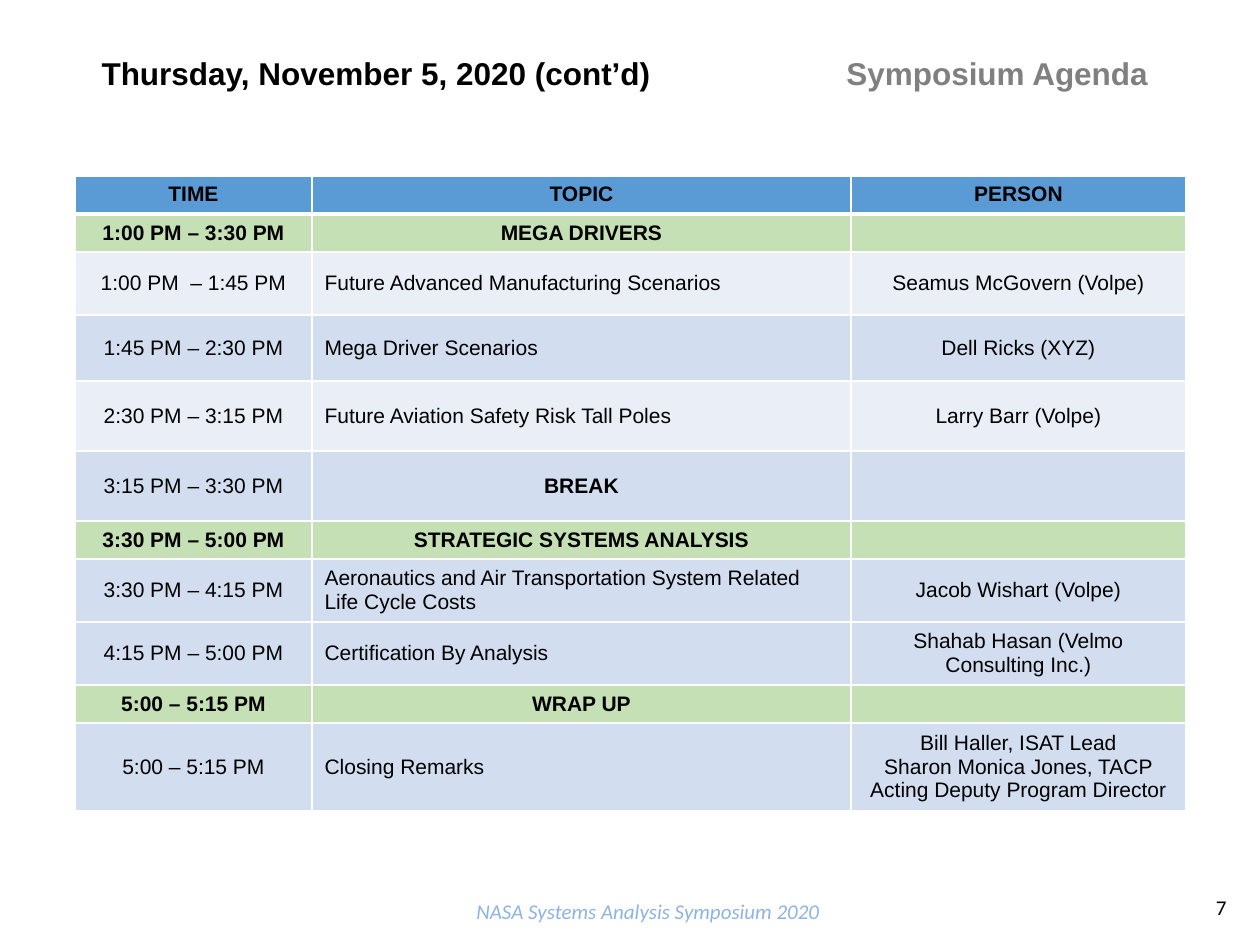
import lxml.etree
import pptx
import pptx.dml.color
import pptx.enum.text
import pptx.oxml.ns
import pptx.util

RGBColor = pptx.dml.color.RGBColor
PP_ALIGN = pptx.enum.text.PP_ALIGN
ANCHOR = pptx.enum.text.MSO_ANCHOR
qn = pptx.oxml.ns.qn

BLACK = RGBColor(0x00, 0x00, 0x00)
GRAY = RGBColor(0x80, 0x80, 0x80)
FOOTER_BLUE = RGBColor(0x8E, 0xB4, 0xE3)
HEADER = RGBColor(0x5B, 0x9B, 0xD5)
SESSION = RGBColor(0xC5, 0xE0, 0xB4)
LIGHT = RGBColor(0xEA, 0xEF, 0xF7)
MEDIUM = RGBColor(0xD2, 0xDE, 0xEF)

PX = 914400 / 126


def px(n):
    return pptx.util.Emu(round(n * PX))


def format_text(tf, size, font, color, align, bold=False, italic=False):
    for p in tf.paragraphs:
        p.alignment = align
        for r in p.runs:
            r.font.size = pptx.util.Pt(size)
            r.font.name = font
            r.font.color.rgb = color
            r.font.bold = bold
            r.font.italic = italic


prs = pptx.Presentation()
prs.slide_width, prs.slide_height = px(1260), px(945)
s = prs.slides.add_slide(prs.slide_layouts[5])

title = s.shapes.title
title.left, title.top, title.width, title.height = px(89), px(48), px(580), px(50)
tf = title.text_frame
tf.text = "Thursday, November 5, 2020 (cont’d)"
tf.word_wrap = False
tf.auto_size = pptx.enum.text.MSO_AUTO_SIZE.NONE
tf.vertical_anchor = ANCHOR.TOP
format_text(tf, 18, "Arial", BLACK, PP_ALIGN.LEFT, bold=True)

# text, box, size, font, colour, alignment, anchor, bold, italic
labels = [
    ("Symposium Agenda", (834, 48, 339, 50), 18, "Arial", GRAY,
     PP_ALIGN.LEFT, ANCHOR.TOP, True, False),
    ("NASA Systems Analysis Symposium 2020", (249, 886, 798, 50), 12, "Calibri",
     FOOTER_BLUE, PP_ALIGN.CENTER, ANCHOR.MIDDLE, False, True),
    ("7", (945, 882, 294, 50), 12, "Calibri", BLACK,
     PP_ALIGN.RIGHT, ANCHOR.MIDDLE, False, False),
]
for text, box, size, font, color, align, anchor, bold, italic in labels:
    tf = s.shapes.add_textbox(*map(px, box)).text_frame
    tf.text = text
    tf.word_wrap = True
    tf.vertical_anchor = anchor
    format_text(tf, size, font, color, align, bold, italic)

# height, fill, time, topic, person
agenda = [
    (37, HEADER, "TIME", "TOPIC", "PERSON"),
    (38, SESSION, "1:00 PM – 3:30 PM", "MEGA DRIVERS", ""),
    (63, LIGHT, "1:00 PM  – 1:45 PM", "Future Advanced Manufacturing Scenarios",
     "Seamus McGovern (Volpe)"),
    (66, MEDIUM, "1:45 PM – 2:30 PM", "Mega Driver Scenarios", "Dell Ricks (XYZ)"),
    (70, LIGHT, "2:30 PM – 3:15 PM", "Future Aviation Safety Risk Tall Poles",
     "Larry Barr (Volpe)"),
    (70, MEDIUM, "3:15 PM – 3:30 PM", "BREAK", ""),
    (38, SESSION, "3:30 PM – 5:00 PM", "STRATEGIC SYSTEMS ANALYSIS", ""),
    (63, MEDIUM, "3:30 PM – 4:15 PM",
     "Aeronautics and Air Transportation System Related Life Cycle Costs",
     "Jacob Wishart (Volpe)"),
    (63, MEDIUM, "4:15 PM – 5:00 PM", "Certification By Analysis",
     "Shahab Hasan (Velmo Consulting Inc.)"),
    (37, SESSION, "5:00 – 5:15 PM", "WRAP UP", ""),
    (88, MEDIUM, "5:00 – 5:15 PM", "Closing Remarks",
     "Bill Haller, ISAT Lead\nSharon Monica Jones, TACP Acting Deputy Program Director"),
]
col_widths = [237, 539, 335]
height = sum(row[0] for row in agenda)
table = s.shapes.add_table(len(agenda), len(col_widths), px(75), px(176),
                           px(sum(col_widths)), px(height)).table
for column, width in zip(table.columns, col_widths):
    column.width = px(width)

for i, (row_height, fill, *texts) in enumerate(agenda):
    table.rows[i].height = px(row_height)
    heading = fill in (HEADER, SESSION)
    for j, text in enumerate(texts):
        cell = table.cell(i, j)
        tcPr = cell._tc.get_or_add_tcPr()
        for side in "LRTB":
            thick = (i, side) in ((0, "B"), (1, "T"))
            ln = lxml.etree.SubElement(tcPr, qn("a:ln" + side), w="38100" if thick else "12700")
            solid = lxml.etree.SubElement(ln, qn("a:solidFill"))
            lxml.etree.SubElement(solid, qn("a:srgbClr"), val="FFFFFF")
        cell.fill.solid()
        cell.fill.fore_color.rgb = fill
        cell.vertical_anchor = ANCHOR.TOP if i == 0 else ANCHOR.MIDDLE
        tf = cell.text_frame
        if not text:
            # keeps the empty line from stretching the row
            lxml.etree.SubElement(tf.paragraphs[0]._p, qn("a:endParaRPr"), sz="1200")
            continue
        tf.text = text
        bold = heading or text == "BREAK"
        align = PP_ALIGN.LEFT if j == 1 and not bold else PP_ALIGN.CENTER
        format_text(tf, 12, "Arial", BLACK, align, bold)

prs.save("out.pptx")
